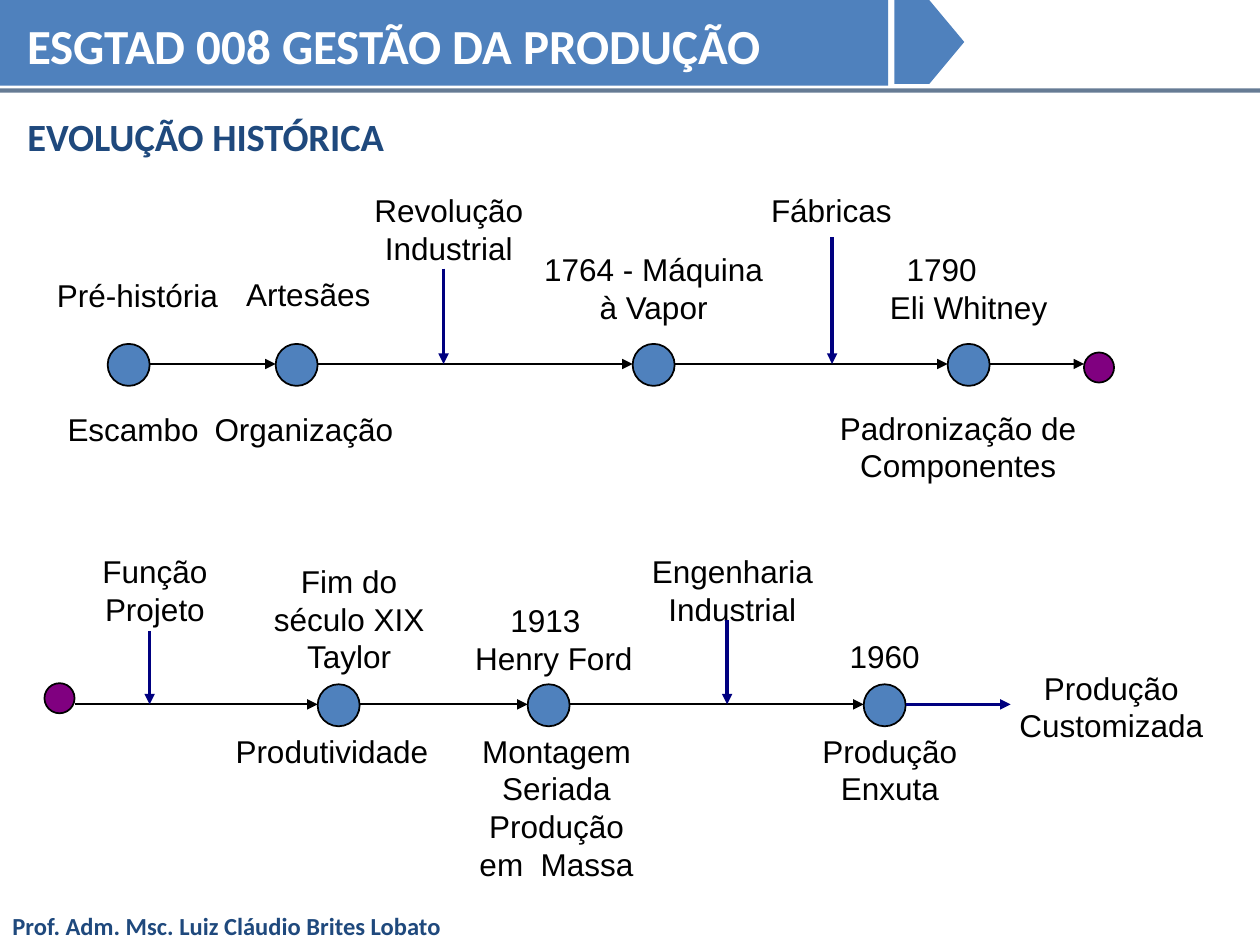
"""Builds the production management slide with two historical timelines."""
import pptx
import pptx.dml.color
import pptx.enum.shapes
import pptx.enum.text
import pptx.oxml
import pptx.util
import lxml.etree

Pt = pptx.util.Pt
Kind = pptx.enum.shapes.MSO_SHAPE
Align = pptx.enum.text.PP_ALIGN
Anchor = pptx.enum.text.MSO_ANCHOR
Fit = pptx.enum.text.MSO_AUTO_SIZE
LEFT, CENTER = Align.LEFT, Align.CENTER
BLUE, NAVY, PURPLE, BLACK = "4F81BD", "000080", "800080", "000000"
TITLE_BLUE = "1F497D"
NODE, JOINT = 24, 17.2
LINE_HEIGHT, PADDING = 21.6, 7.2

HEADER = "ESGTAD 008 GESTÃO DA PRODUÇÃO"
TITLE = "EVOLUÇÃO HISTÓRICA"
FOOTER = "Prof. Adm. Msc. Luiz Cláudio Brites Lobato"

TIMELINES = [
    {
        "axis": 208,
        "stops": [(73.5, NODE), (169.5, NODE), (373.5, NODE), (553.5, NODE), (628, JOINT)],
        "joint": (628, 210),
        "events": [(253.5, 153.5), (475.5, 135.5)],
    },
    {
        "axis": 402.5,
        "stops": [(34, JOINT), (193.5, NODE), (313.5, NODE), (505.5, NODE)],
        "joint": (34, 399),
        "events": [(85.5, 360.5), (415.5, 354.5)],
        "exit": 577.5,
    },
]

LABELS = [
    ("Pré-história", 25.5, 154, 108, 1, LEFT),
    ("Escambo", 31.5, 230.5, 90, 1, LEFT),
    ("Artesães", 133.5, 153.5, 90, 1, LEFT),
    ("Organização", 115.5, 230.5, 126, 1, LEFT),
    ("Revolução Industrial", 205.5, 105.5, 102, 2, CENTER),
    ("1764 - Máquina à Vapor", 301.5, 139.5, 144, 2, CENTER),
    ("Fábricas", 433.5, 105.5, 96, 1, LEFT),
    ("Padronização de Componentes", 469.5, 230, 156, 2, CENTER),
    ("Função Projeto", 43.5, 312, 90, 2, CENTER),
    ("Fim do século XIX Taylor", 145.5, 317.5, 108, 3, CENTER),
    ("Produtividade", 127.5, 414.5, 132, 1, LEFT),
    ("Montagem Seriada Produção em  Massa", 259.5, 414.5, 117, 4, CENTER),
    ("Engenharia Industrial", 361.5, 312, 114, 2, CENTER),
    ("1960", 475.5, 360.5, 60, 1, CENTER),
    ("Produção Enxuta", 457.5, 414.5, 102, 2, CENTER),
    ("Produção Customizada", 569, 378.5, 132, 2, CENTER),
]

PIONEERS = [
    ("1790", "Eli Whitney", 499.5, 139.5, 108, 11.5),
    ("1913", "Henry Ford", 259.5, 340, 114, 25),
]


def color(code):
    return pptx.dml.color.RGBColor.from_string(code)


def add_line(page, start, end, code, width, arrow=True):
    line = page.shapes.add_connector(
        pptx.enum.shapes.MSO_CONNECTOR.STRAIGHT, *map(Pt, start + end))
    line.line.color.rgb = color(code)
    line.line.width = Pt(width)
    namespace = pptx.oxml.ns.qn
    properties = line.line._get_or_add_ln()
    if arrow:
        lxml.etree.SubElement(properties, namespace("a:tailEnd"), type="triangle")
    lxml.etree.SubElement(line._element.spPr, namespace("a:effectLst"))
    return line


def add_shape(page, kind, place, fill, outline=None):
    shape = page.shapes.add_shape(kind, *map(Pt, place))
    shape.shadow.inherit = False
    shape.fill.solid()
    shape.fill.fore_color.rgb = color(fill)
    if outline:
        shape.line.color.rgb = color(outline)
        shape.line.width = Pt(1)
    else:
        shape.line.fill.background()
    return shape


def add_circle(page, x, y, size, fill):
    add_shape(page, Kind.OVAL, (x - size / 2, y - size / 2, size, size), fill, BLACK)


def write(para, text, size, code, font="Calibri", bold=True, align=LEFT):
    para.alignment = align
    span = para.add_run()
    span.text = text
    span.font.size, span.font.name, span.font.bold = Pt(size), font, bold
    span.font.color.rgb = color(code)


def add_box(page, place, fit=Fit.SHAPE_TO_FIT_TEXT):
    box = page.shapes.add_textbox(*map(Pt, place))
    box.text_frame.word_wrap = True
    box.text_frame.auto_size = fit
    return box.text_frame


def add_label(page, x, y, width, rows):
    return add_box(page, (x, y, width, rows * LINE_HEIGHT + PADDING))


def write_label(para, text, align):
    write(para, text, 18, BLACK, "Arial", False, align)


def add_frame(page):
    add_shape(page, Kind.RECTANGLE, (0, 0, 507.5, 49), BLUE)
    rule = add_line(page, (0, 51.75), (720, 51.75), "17375E", 2.5, arrow=False)
    shade = rule._element.spPr.find(".//" + pptx.oxml.ns.qn("a:srgbClr"))
    lxml.etree.SubElement(shade, pptx.oxml.ns.qn("a:alpha"), val="65000")
    footer = add_box(page, (0, 517, 292, 24.2))
    write(footer.paragraphs[0], FOOTER, 14, TITLE_BLUE)
    add_shape(page, Kind.PENTAGON, (511, 0, 40, 48), BLUE)
    header = add_box(page, (8.5, 5.5, 499, 37.5), Fit.NONE)
    write(header.paragraphs[0], HEADER, 28, "FFFFFF")
    title = page.shapes.title
    title.left, title.top, title.width, title.height = map(Pt, (8.5, 60.5, 618, 34))
    title.text_frame.vertical_anchor = Anchor.BOTTOM
    title.text_frame.auto_size = Fit.NONE
    write(title.text_frame.paragraphs[0], TITLE, 22, TITLE_BLUE)


def add_timeline(page, timeline):
    axis, stops = timeline["axis"], timeline["stops"]
    for x, size in stops:
        if size == NODE:
            add_circle(page, x, axis + 0.5, NODE, BLUE)
    for (x, size), (next_x, next_size) in zip(stops, stops[1:]):
        add_line(page, (x + size / 2, axis), (next_x - next_size / 2, axis), BLACK, 1)
    for x, top in timeline["events"]:
        add_line(page, (x, top), (x, axis), NAVY, 2)
    if "exit" in timeline:
        add_line(page, (stops[-1][0] + NODE / 2, axis), (timeline["exit"], axis), NAVY, 2)
    add_circle(page, *timeline["joint"], JOINT, PURPLE)


def main():
    deck = pptx.Presentation()
    deck.slide_width, deck.slide_height = Pt(720), Pt(540)
    page = deck.slides.add_slide(deck.slide_layouts[5])
    add_frame(page)
    for text, x, y, width, rows, align in LABELS:
        frame = add_label(page, x, y, width, rows)
        write_label(frame.paragraphs[0], text, align)
    for year, name, x, y, width, indent in PIONEERS:
        frame = add_label(page, x, y, width, 2)
        frame.paragraphs[0]._p.get_or_add_pPr().set("marL", str(Pt(indent)))
        write_label(frame.paragraphs[0], year, LEFT)
        write_label(frame.add_paragraph(), name, CENTER)
    for timeline in TIMELINES:
        add_timeline(page, timeline)
    deck.save("out.pptx")


if __name__ == "__main__":
    main()
